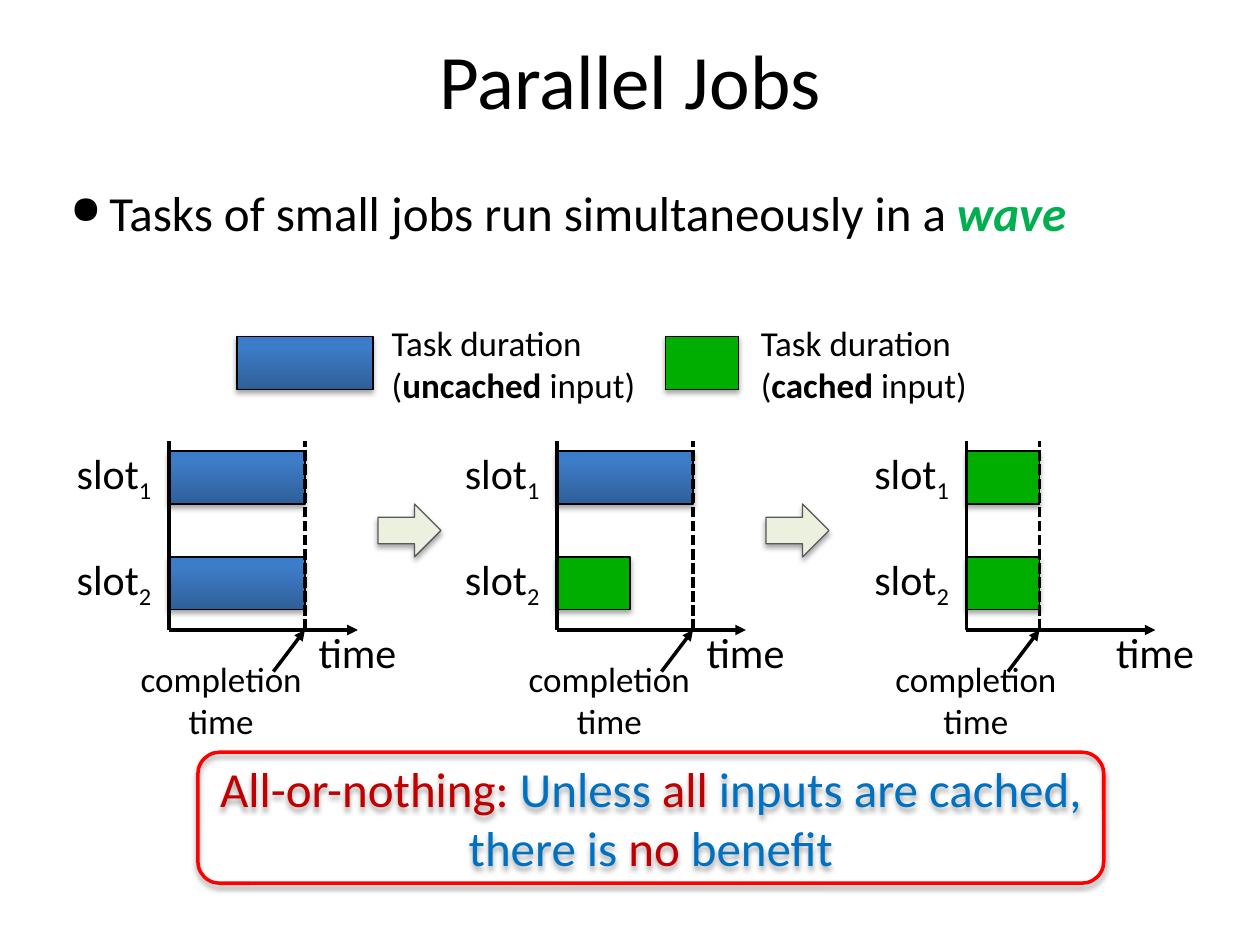
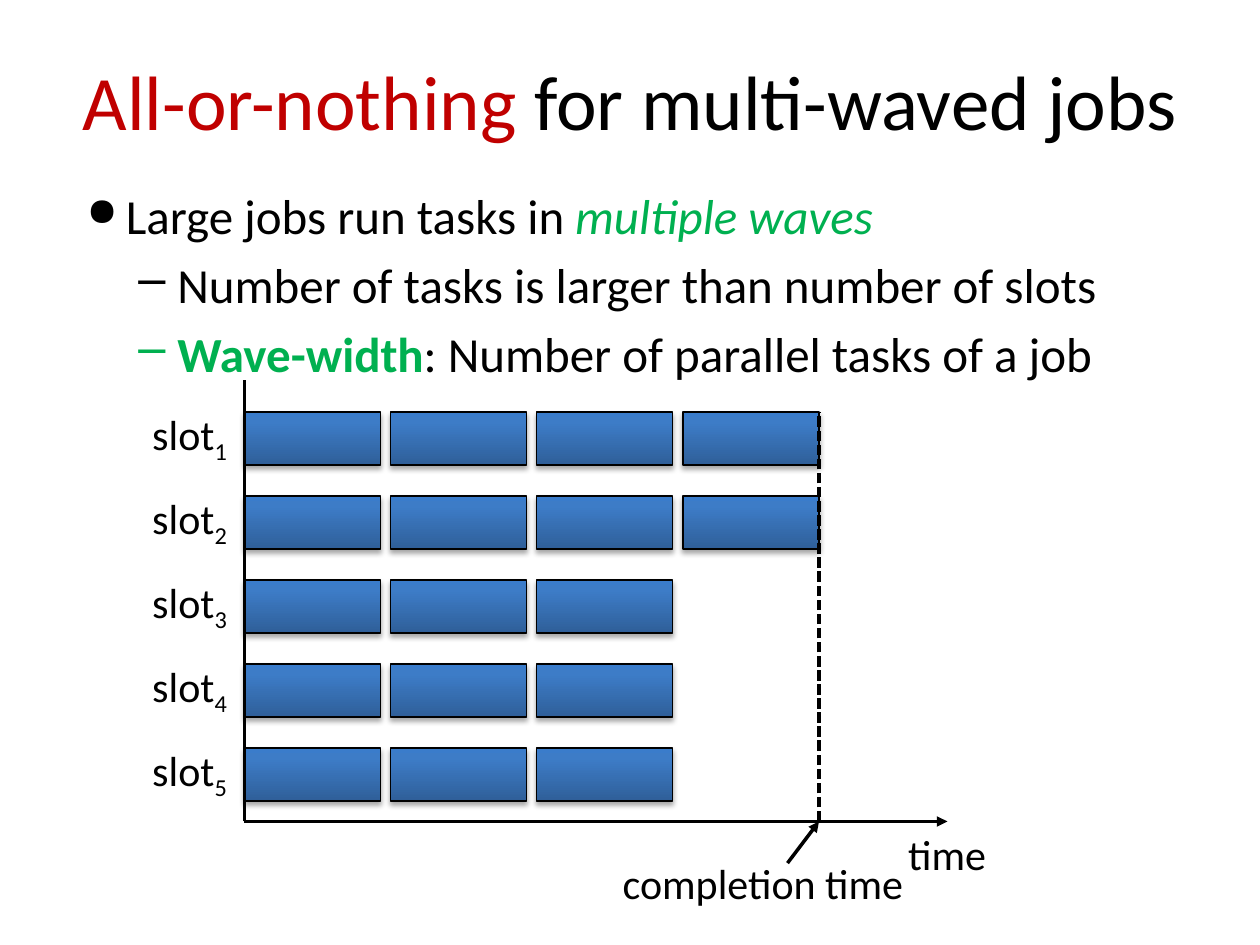
from lxml import etree
from pptx import Presentation
from pptx.dml.color import RGBColor
from pptx.enum import dml, shapes, text
from pptx.oxml import ns
from pptx.util import Inches, Pt

COLORS = {
    "ink": "000000", "green": "00B050", "red": "C00000", "blue": "0070C0",
    "cached": "00AE00", "arrow": "EBF1DE", "arrow_edge": "595959", "frame": "FF0000",
}
UNCACHED_STOPS = [(0, "2F5F99"), (80, "3D7CC7"), (100, "3A7CCB")]
FONT = "Calibri"
LONG, SHORT, BAR_H = 1.08, 0.58, 0.42
BULLETS = [("●", 0.4, 80), ("–", 0.81, 100)]
SHAPE = shapes.MSO_SHAPE


def rgb(name):
    return RGBColor.from_string(COLORS[name])


def child(parent, tag, **attrs):
    return etree.SubElement(parent, ns.qn("a:" + tag), {k: str(v) for k, v in attrs.items()})


def write(tf, paragraphs, size=24, color="ink", align=None, anchor=None, wrap=False):
    tf.word_wrap = wrap
    tf.vertical_anchor = anchor
    for i, runs in enumerate(paragraphs):
        p = tf.paragraphs[0] if i == 0 else tf.add_paragraph()
        p.alignment = align
        for words, fmt in runs:
            r = p.add_run()
            r.text = words
            font = r.font
            font.name, font.size = FONT, Pt(size)
            font.bold, font.italic = fmt.get("bold"), fmt.get("italic")
            font.color.rgb = rgb(fmt.get("color", color))
            if fmt.get("sub"):
                font._element.set("baseline", "-25000")


def add_text(slide, box, paragraphs, **fmt):
    tf = slide.shapes.add_textbox(*map(Inches, box)).text_frame
    write(tf, paragraphs, **fmt)
    return tf


def add_title(slide, top, runs):
    sp = slide.shapes.title
    sp.left, sp.top, sp.width, sp.height = map(Inches, (0.5, top, 9, 1.25))
    write(sp.text_frame, [runs], size=44, align=text.PP_ALIGN.CENTER,
          anchor=text.MSO_ANCHOR.MIDDLE, wrap=True)


def add_bullets(slide, box, items):
    tf = add_text(slide, box, [runs for _, runs in items], size=28, wrap=True)
    for p, (level, _) in zip(tf.paragraphs, items):
        char, indent, percent = BULLETS[level]
        p.space_before = Pt(6)
        pPr = p._p.get_or_add_pPr()
        pPr.set("marL", str(Inches(indent)))
        pPr.set("indent", str(Inches(-0.31)))
        child(pPr, "buSzPct", val=percent * 1000)
        child(pPr, "buChar", char=char)


def add_box(slide, kind, box, fill=None, edge="ink", weight=0.75):
    sp = slide.shapes.add_shape(kind, *map(Inches, box))
    if fill == "uncached":
        sp.fill.gradient()
        grad = sp._element.spPr.find(ns.qn("a:gradFill"))
        for part in list(grad):
            grad.remove(part)
        stops = child(grad, "gsLst")
        for pos, value in UNCACHED_STOPS:
            child(child(stops, "gs", pos=pos * 1000), "srgbClr", val=value)
        child(grad, "lin", ang=270 * 60000, scaled=0)
    elif fill:
        sp.fill.solid()
        sp.fill.fore_color.rgb = rgb(fill)
    else:
        sp.fill.background()
    sp.line.color.rgb = rgb(edge)
    sp.line.width = Pt(weight)
    sp.shadow.inherit = False
    effects = sp._element.spPr.find(ns.qn("a:effectLst"))
    shadow = child(effects, "outerShdw", blurRad=Pt(3.1), dist=Pt(1.8),
                   dir=90 * 60000, rotWithShape=0)
    child(child(shadow, "srgbClr", val=COLORS["ink"]), "alpha", val=35000)
    return sp


def add_line(slide, start, end, arrow=False, dashed=False):
    cx = slide.shapes.add_connector(shapes.MSO_CONNECTOR.STRAIGHT,
                                    *map(Inches, (*start, *end)))
    cx.line.color.rgb = rgb("ink")
    cx.line.width = Pt(2)
    if dashed:
        cx.line.dash_style = dml.MSO_LINE.SQUARE_DOT
    if arrow:
        child(cx.line._get_or_add_ln(), "tailEnd", type="triangle")
    child(cx._element.spPr, "effectLst")


def add_bar(slide, x, y, fill):
    width = LONG if fill == "uncached" else SHORT
    add_box(slide, SHAPE.RECTANGLE, (x, y, width, BAR_H), fill)


def add_timeline(slide, box, slots, first, pitch, finish, finish_top, time_at, note, note_box,
                 note_size):
    x, y, w, h = box
    base = y + h
    for i, tasks in enumerate(slots):
        top = y + first + i * pitch
        for j, fill in enumerate(tasks):
            add_bar(slide, x + j * 1.16, top, fill)
        add_text(slide, (x - 0.83, top - 0.08, 0.81, 0.5),
                 [[("slot", {}), (str(i + 1), {"sub": True})]])
    add_text(slide, (x + time_at[0], base + time_at[1], 0.83, 0.5), [[("time", {})]])
    end = (x + finish, base)
    add_line(slide, (end[0] - 0.25, base + 0.33), end, arrow=True)
    dx, dy, width, height = note_box
    add_text(slide, (x + dx, base + dy, width, height), [[(line, {})] for line in note],
             size=note_size, align=text.PP_ALIGN.CENTER)
    add_line(slide, (x, base), (x, y))
    add_line(slide, (x, base), (x + w, base), arrow=True)
    add_line(slide, end, (end[0], y + finish_top), dashed=True)


def add_legend(slide, x, y):
    for dx, label_dx, width, fill in ((0, 1.13, 2.15, "uncached"), (3.4, 4.06, 1.85, "cached")):
        add_bar(slide, x + dx, y + 0.17, fill)
        add_text(slide, (x + label_dx, y, width, 0.77),
                 [[("Task duration", {})],
                  [("(", {}), (fill, {"bold": True}), (" input)", {})]], size=20)


def add_conclusion(slide, box):
    sp = add_box(slide, SHAPE.ROUNDED_RECTANGLE, box, edge="frame", weight=2)
    red = {"color": "red"}
    write(sp.text_frame, [[("All-or-nothing: ", red), ("Unless ", {}), ("all", red),
                           (" inputs are cached, there is ", {}), ("no", red),
                           (" benefit", {})]],
          size=28, color="blue", align=text.PP_ALIGN.CENTER,
          anchor=text.MSO_ANCHOR.MIDDLE, wrap=True)


def parallel_jobs(slide):
    add_title(slide, 0, [("Parallel Jobs", {})])
    add_bullets(slide, (0.37, 1.4, 9.44, 1.81),
                [(0, [("Tasks of small jobs run simultaneously in a ", {}),
                      ("wave", {"color": "green", "bold": True, "italic": True})])])
    add_legend(slide, 1.88, 2.5)
    stages = [(1.34, ("uncached", "uncached"), LONG, -0.33),
              (4.42, ("uncached", "cached"), LONG, -0.33),
              (7.67, ("cached", "cached"), SHORT, -0.67)]
    for x, fills, finish, note_dx in stages:
        add_timeline(slide, (x, 3.5, 1.5, 1.5), [[fill] for fill in fills], first=0.08,
                     pitch=0.84, finish=finish, finish_top=0, time_at=(1.09, -0.08),
                     note=["completion ", "time"], note_box=(note_dx, 0.17, 1.49, 0.77),
                     note_size=20)
    for x in (3, 6.08):
        add_box(slide, SHAPE.RIGHT_ARROW, (x, 4, 0.5, 0.42), "arrow", "arrow_edge")
    add_conclusion(slide, (1.57, 5.97, 7.19, 1.04))


def multi_waved_jobs(slide):
    add_title(slide, 0.17, [("All-or-nothing", {"color": "red"}),
                            (" for multi-waved jobs", {})])
    add_bullets(slide, (0.5, 1.42, 9, 1.64), [
        (0, [("Large jobs run tasks in ", {}),
             ("multiple waves", {"color": "green", "italic": True})]),
        (1, [("Number of tasks is larger than number of slots", {})]),
        (1, [("Wave-width", {"color": "green", "bold": True}),
             (": Number of parallel tasks of a job", {})]),
    ])
    add_timeline(slide, (1.94, 3.02, 5.58, 3.5),
                 [["uncached"] * waves for waves in (4, 4, 3, 3, 3)], first=0.25,
                 pitch=2 / 3, finish=4.56, finish_top=0.25, time_at=(5.17, 0.01),
                 note=["completion time"], note_box=(2.89, 0.24, 2.45, 0.5), note_size=24)


def main():
    prs = Presentation()
    prs.slide_width, prs.slide_height = Inches(10), Inches(7.5)
    for build in (parallel_jobs, multi_waved_jobs):
        build(prs.slides.add_slide(prs.slide_layouts[5]))
    prs.save("out.pptx")


if __name__ == "__main__":
    main()
